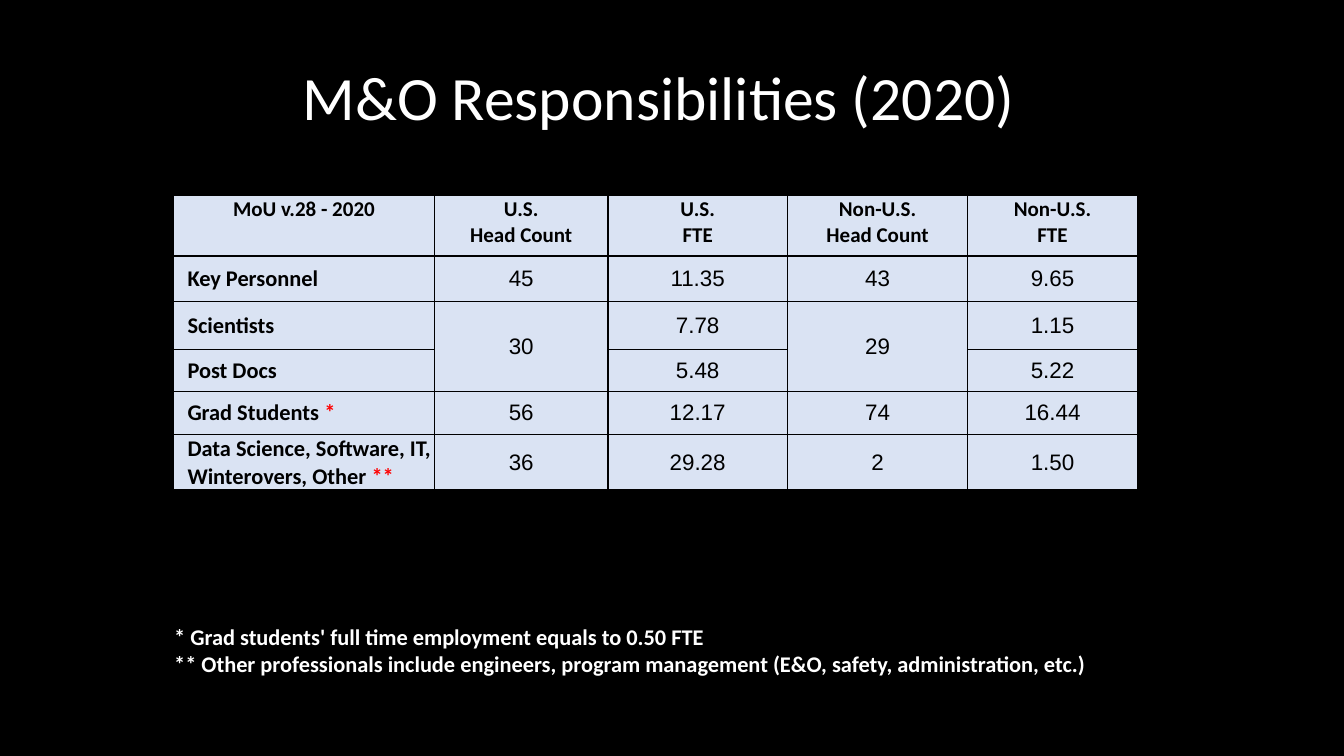
from dataclasses import dataclass

from lxml import etree
from pptx import Presentation
from pptx.dml.color import RGBColor
from pptx.enum import text
from pptx.oxml import ns
from pptx.util import Inches, Pt


@dataclass(frozen=True)
class Theme:
    background = RGBColor(0, 0, 0)
    light = RGBColor(255, 255, 255)
    dark = RGBColor(0, 0, 0)
    marker = RGBColor(255, 0, 0)
    cell = RGBColor(0xDA, 0xE3, 0xF3)
    label_font = "Calibri"
    number_font = "Arial"
    title_size = Pt(44)
    header_size = Pt(15)
    body_size = Pt(16)


THEME = Theme()
TABLE_LEFT = 1.72
COLUMN_WIDTHS = [2.59, 1.72, 1.78, 1.79, 1.68]
LABEL_INDENT = Inches(0.13)

HEADER = ["MoU v.28 - 2020", "U.S.\nHead Count", "U.S.\nFTE",
          "Non-U.S.\nHead Count", "Non-U.S.\nFTE"]
# Label, footnote marker, then the four figures; None continues the cell above.
STAFF = [
    ("Key Personnel", "", "45", "11.35", "43", "9.65"),
    ("Scientists", "", "30", "7.78", "29", "1.15"),
    ("Post Docs", "", None, "5.48", None, "5.22"),
    ("Grad Students ", "*", "56", "12.17", "74", "16.44"),
]
OTHER_STAFF = [
    ("Data Science, Software, IT, Winterovers, Other ", "**",
     "36", "29.28", "2", "1.50"),
]
FOOTNOTES = (
    "* Grad students' full time employment equals to 0.50 FTE\n"
    "** Other professionals include engineers, program management "
    "(E&O, safety, administration, etc.)"
)


def style_font(font, size, color, name=THEME.label_font, bold=False):
    font.size, font.name, font.bold = size, name, bold
    font.color.rgb = color


def fill_text(frame, content, align, *font_style, **font_options):
    """Write one paragraph per line, all in one style."""
    frame.text = content
    for paragraph in frame.paragraphs:
        paragraph.alignment = align
        style_font(paragraph.font, *font_style, **font_options)


def add_text(slide, box, content, size, align=text.PP_ALIGN.LEFT,
             anchor=text.MSO_ANCHOR.TOP, bold=False):
    frame = slide.shapes.add_textbox(*map(Inches, box)).text_frame
    frame.word_wrap = True
    frame.vertical_anchor = anchor
    fill_text(frame, content, align, size, THEME.light, bold=bold)
    return frame


def style_cell(cell):
    """Give a cell thin dark borders, a pale fill and tight margins."""
    properties = cell._tc.get_or_add_tcPr()
    for side in ("lnL", "lnR", "lnT", "lnB"):
        line = etree.SubElement(properties, ns.qn(f"a:{side}"), w=str(Pt(1)))
        solid = etree.SubElement(line, ns.qn("a:solidFill"))
        etree.SubElement(solid, ns.qn("a:srgbClr"), val=str(THEME.dark))
    cell.fill.solid()
    cell.fill.fore_color.rgb = THEME.cell
    cell.margin_left = cell.margin_right = cell.margin_top = Inches(0.01)
    cell.margin_bottom = 0


def add_grid(slide, top, row_heights):
    frame = slide.shapes.add_table(
        len(row_heights), len(COLUMN_WIDTHS), Inches(TABLE_LEFT), Inches(top),
        Inches(sum(COLUMN_WIDTHS)), Inches(sum(row_heights)))
    table = frame.table
    table.first_row = table.horz_banding = False
    for column, width in zip(table.columns, COLUMN_WIDTHS):
        column.width = Inches(width)
    for row, height in zip(table.rows, row_heights):
        row.height = Inches(height)
    for cell in table.iter_cells():
        style_cell(cell)
    return table


def fill_header(table):
    for column, heading in enumerate(HEADER):
        fill_text(table.cell(0, column).text_frame, heading,
                  text.PP_ALIGN.CENTER, THEME.header_size, THEME.dark, bold=True)


def fill_label(cell, label, marker):
    cell.vertical_anchor = text.MSO_ANCHOR.MIDDLE
    fill_text(cell.text_frame, label, text.PP_ALIGN.LEFT,
              THEME.body_size, THEME.dark, bold=True)
    paragraph = cell.text_frame.paragraphs[0]
    paragraph._p.get_or_add_pPr().set("marL", str(LABEL_INDENT))
    if marker:
        run = paragraph.add_run()
        run.text = marker
        run.font.color.rgb = THEME.marker


def fill_staff(table, staff, first_row=0):
    for row, (label, marker, *figures) in enumerate(staff, first_row):
        fill_label(table.cell(row, 0), label, marker)
        for column, figure in enumerate(figures, 1):
            cell = table.cell(row, column)
            if figure is None:
                table.cell(row - 1, column).merge(cell)
                continue
            cell.vertical_anchor = text.MSO_ANCHOR.MIDDLE
            fill_text(cell.text_frame, figure, text.PP_ALIGN.CENTER,
                      THEME.body_size, THEME.dark, name=THEME.number_font)


def main():
    deck = Presentation()
    deck.slide_width, deck.slide_height = Inches(13.33), Inches(7.5)
    slide = deck.slides.add_slide(deck.slide_layouts[6])
    slide.background.fill.solid()
    slide.background.fill.fore_color.rgb = THEME.background

    title = add_text(slide, (2.3, 0.27, 8.47, 1.45), "M&O Responsibilities (2020)",
                     THEME.title_size, text.PP_ALIGN.CENTER, text.MSO_ANCHOR.MIDDLE)
    title.paragraphs[0].line_spacing = 0.9

    staff_table = add_grid(slide, 1.94, [0.6, 0.45, 0.48, 0.41, 0.43])
    fill_header(staff_table)
    fill_staff(staff_table, STAFF, first_row=1)
    fill_staff(add_grid(slide, 4.31, [0.54]), OTHER_STAFF)

    add_text(slide, (1.63, 6.13, 10.23, 0.64), FOOTNOTES, THEME.body_size, bold=True)
    deck.save("out.pptx")


if __name__ == "__main__":
    main()
